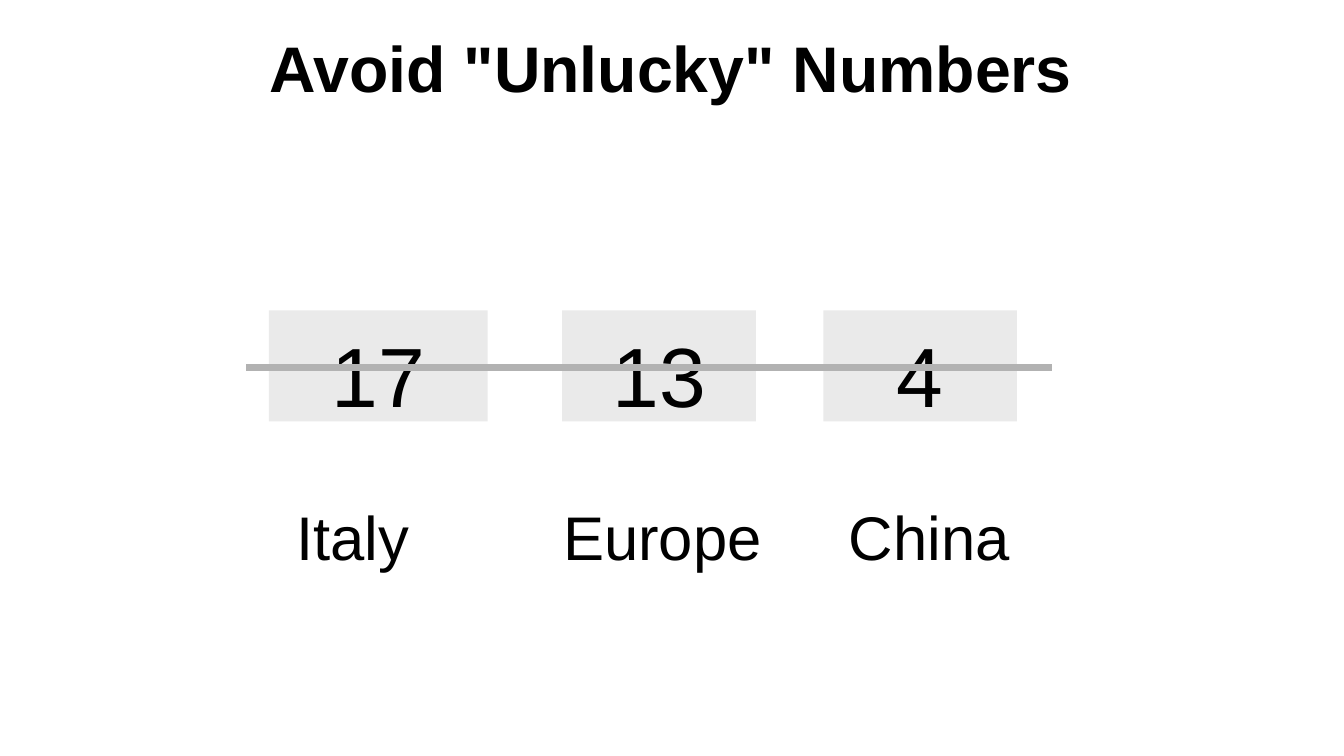
"""Build a slide about numbers considered unlucky in different regions."""
from dataclasses import dataclass

from lxml import etree
from pptx import Presentation
from pptx.dml.color import RGBColor
from pptx.enum.shapes import MSO_CONNECTOR, MSO_SHAPE
from pptx.enum.text import MSO_ANCHOR, PP_ALIGN
from pptx.oxml.ns import qn
from pptx.util import Cm, Pt

RECTANGLE = MSO_SHAPE.RECTANGLE
STRAIGHT = MSO_CONNECTOR.STRAIGHT
TOP = MSO_ANCHOR.TOP
LEFT, CENTER = PP_ALIGN.LEFT, PP_ALIGN.CENTER


@dataclass(frozen=True)
class Theme:
    font: str = "Arial"
    ink: RGBColor = RGBColor(0x00, 0x00, 0x00)
    tile: RGBColor = RGBColor(0xEA, 0xEA, 0xEA)
    strike: RGBColor = RGBColor(0xB2, 0xB2, 0xB2)
    title_size: int = 46
    number_size: int = 60
    region_size: int = 44
    strike_width: int = 5


theme = Theme()


def write(box, text, size, alignment, top_margin, bold=False):
    """Put one styled paragraph in a box and return the paragraph."""
    frame = box.text_frame
    frame.text = text
    frame.word_wrap = True
    frame.vertical_anchor = TOP
    frame.margin_left = frame.margin_right = Cm(0.13)
    frame.margin_top, frame.margin_bottom = Cm(top_margin), Cm(0)
    para = frame.paragraphs[0]
    para.alignment = alignment
    for span in para.runs:
        span.font.name = theme.font
        span.font.size = Pt(size)
        span.font.bold = bold
        span.font.color.rgb = theme.ink
    return para


deck = Presentation()
deck.slide_width, deck.slide_height = Cm(33.87), Cm(19.05)
page = deck.slides.add_slide(deck.slide_layouts[6])

title = page.shapes.add_textbox(Cm(5.28), Cm(0.43), Cm(23.7), Cm(2.24))
write(title, 'Avoid "Unlucky" Numbers ', theme.title_size, CENTER, 0.28, bold=True)

for number, left, width in (("17", 6.78, 5.51), ("13", 14.17, 4.88), ("4", 20.75, 4.88)):
    tile = page.shapes.add_shape(RECTANGLE, Cm(left), Cm(7.82), Cm(width), Cm(2.8))
    tile.shadow.inherit = False
    tile.fill.solid()
    tile.fill.fore_color.rgb = theme.tile
    tile.line.fill.background()
    write(tile, number, theme.number_size, CENTER, 0.34)

regions = page.shapes.add_textbox(Cm(7.34), Cm(12.29), Cm(21.16), Cm(2.13))
region_line = write(regions, "Italy\tEurope\tChina", theme.region_size, LEFT, 0.28)
tab_list = etree.SubElement(region_line._p.get_or_add_pPr(), qn("a:tabLst"))
for position in (6.72, 13.92):
    etree.SubElement(tab_list, qn("a:tab"), pos=str(Cm(position)), algn="l")

strike = page.shapes.add_connector(STRAIGHT, Cm(6.2), Cm(9.25), Cm(26.52), Cm(9.25))
strike.line.color.rgb = theme.strike
strike.line.width = Pt(theme.strike_width)
etree.SubElement(strike._element.spPr, qn("a:effectLst"))

deck.save("out.pptx")
